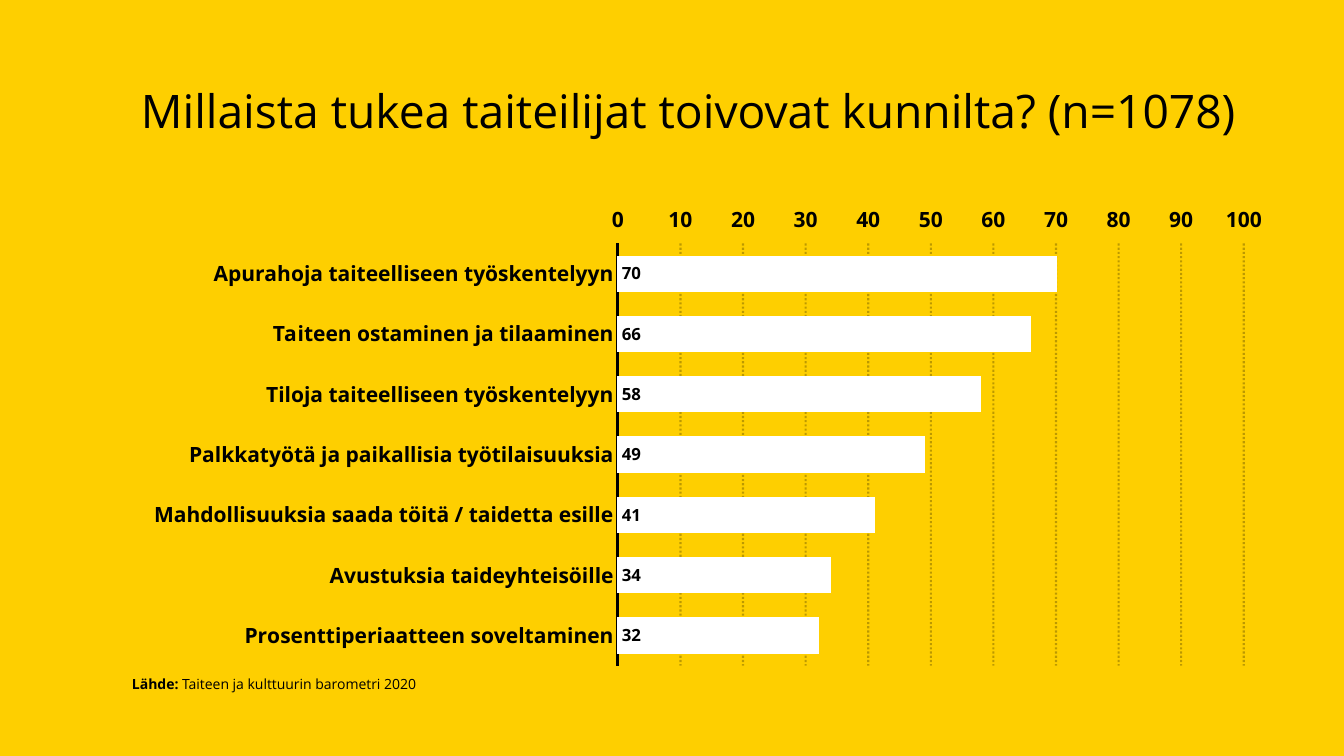
from lxml import etree
from pptx import Presentation
from pptx.chart.data import CategoryChartData as ChartData
from pptx.dml.color import RGBColor
from pptx.enum.chart import XL_CHART_TYPE as Kind, XL_LABEL_POSITION as Spot, XL_TICK_MARK as Tick
from pptx.enum.dml import MSO_LINE as Dash
from pptx.enum.text import MSO_ANCHOR as Anchor
from pptx.oxml import parse_xml
from pptx.oxml.ns import nsdecls, qn
from pptx.util import Pt

BLACK = RGBColor(0, 0, 0)
WHITE = RGBColor(255, 255, 255)
YELLOW = RGBColor(254, 207, 0)
FACE = "Open Sans"

needs = [
    ("Apurahoja taiteelliseen työskentelyyn", 70),
    ("Taiteen ostaminen ja tilaaminen", 66),
    ("Tiloja taiteelliseen työskentelyyn", 58),
    ("Palkkatyötä ja paikallisia työtilaisuuksia", 49),
    ("Mahdollisuuksia saada töitä / taidetta esille", 41),
    ("Avustuksia taideyhteisöille", 34),
    ("Prosenttiperiaatteen soveltaminen", 32),
]


def style(font, size, bold):
    font.name = FACE
    font.size = Pt(size)
    font.bold = bold
    font.color.rgb = BLACK


def add_text(left, top, width, height, inset, anchor, runs):
    box = slide.shapes.add_textbox(Pt(left), Pt(top), Pt(width), Pt(height))
    frame = box.text_frame
    frame.word_wrap = True
    frame.margin_left = Pt(inset)
    frame.vertical_anchor = anchor
    line = frame.paragraphs[0]
    for text, size, bold in runs:
        run = line.add_run()
        run.text = text
        style(run.font, size, bold)
    return line


deck = Presentation()
deck.slide_width, deck.slide_height = Pt(960), Pt(540)
slide = deck.slides.add_slide(deck.slide_layouts[6])
slide.background.fill.solid()
slide.background.fill.fore_color.rgb = YELLOW

title = add_text(93.6, 28.8, 800.6, 104.4, 7.2, Anchor.MIDDLE,
                 [("Millaista tukea taiteilijat toivovat kunnilta? (n=1078)", 33, False)])
title.line_spacing = 0.9
add_text(94.3, 478.8, 828, 19.4, 0, Anchor.TOP,
         [("Lähde: ", 10, True), ("Taiteen ja kulttuurin barometri 2020", 10, False)])

data = ChartData(number_format="0")
data.categories = [name for name, share in needs]
data.add_series("Series 1", [share for name, share in needs])
chart = slide.shapes.add_chart(Kind.BAR_CLUSTERED, Pt(93.6), Pt(139.7),
                               Pt(828), Pt(342.7), data).chart
chart.has_legend = False
chart.has_title = False
chart.font.name = "Karla"
chart.font.size = Pt(10)
chart.font.color.rgb = BLACK

names = chart.category_axis
names.reverse_order = True
names.major_tick_mark = Tick.NONE
names.has_major_gridlines = False
names.format.line.color.rgb = BLACK
names.format.line.width = Pt(2)

scale = chart.value_axis
scale.minimum_scale, scale.maximum_scale, scale.major_unit = 0, 100, 10
scale.major_tick_mark = Tick.OUTSIDE
scale.format.line.fill.background()
for axis in (names, scale):
    axis.minor_tick_mark = Tick.NONE
    style(axis.tick_labels.font, 15, True)

scale.has_major_gridlines = True
grid = scale.major_gridlines.format.line
grid.color.rgb = BLACK
grid.width = Pt(1.5)
grid.dash_style = Dash.ROUND_DOT
tint = scale.major_gridlines._xAx.find(".//" + qn("c:majorGridlines")).find(".//" + qn("a:srgbClr"))
etree.SubElement(tint, qn("a:alpha")).set("val", "25000")

plot = chart.plots[0]
plot.gap_width = 71
plot.vary_by_categories = False
bars = plot.series[0]
bars.format.fill.solid()
bars.format.fill.fore_color.rgb = WHITE
bars.format.line.color.rgb = WHITE
bars.format.line.width = Pt(0)
labels = bars.data_labels
labels.show_value = True
labels.position = Spot.INSIDE_BASE
style(labels.font, 12, True)

area = chart._chartSpace.find(".//" + qn("c:plotArea"))
for old in area.findall(qn("c:layout")):
    area.remove(old)
frame = {"xMode": "edge", "yMode": "edge", "x": 0.42, "y": 0.1, "w": 0.54, "h": 0.88}
parts = "".join(f'<c:{key} val="{val}"/>' for key, val in frame.items())
area.insert(0, parse_xml(
    f'<c:layout {nsdecls("c")}><c:manualLayout><c:layoutTarget val="inner"/>'
    f'{parts}</c:manualLayout></c:layout>'))

deck.save("out.pptx")
